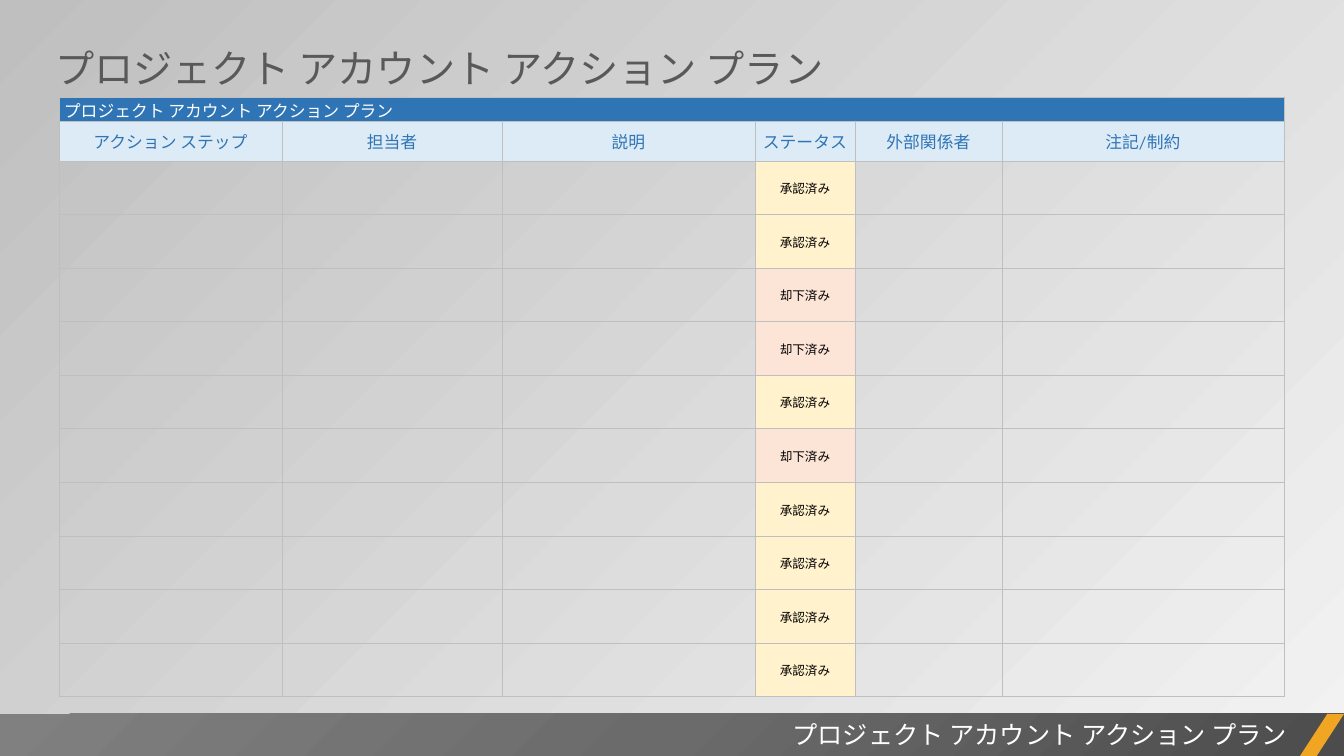
from dataclasses import dataclass

from lxml.etree import SubElement
from pptx import Presentation
from pptx.dml.color import RGBColor
from pptx.enum.shapes import MSO_SHAPE
from pptx.enum.text import MSO_ANCHOR, MSO_AUTO_SIZE, PP_ALIGN
from pptx.oxml.ns import qn
from pptx.util import Emu, Pt

SLIDE_WIDTH, SLIDE_HEIGHT = 1344, 756
EMU_PER_PX = 12192000 / SLIDE_WIDTH

PLAN_TITLE = "プロジェクト アカウント アクション プラン"
COLUMNS = {
    "アクション ステップ": 223,
    "担当者": 220,
    "説明": 253,
    "ステータス": 100,
    "外部関係者": 147,
    "注記/制約": 282,
}
STATUS_COLUMN = 3
APPROVED, REJECTED = "承認済み", "却下済み"
STATUSES = [APPROVED] * 2 + [REJECTED] * 2 + [APPROVED, REJECTED] + [APPROVED] * 4
BANNER_HEIGHT, HEADER_HEIGHT, BODY_HEIGHT = 24, 40, 536


@dataclass(frozen=True)
class Theme:
    """Colours, type sizes and font of the slide."""
    font: str = "League Spartan"
    title_size: int = 28
    footer_size: int = 18
    header_size: int = 12
    status_size: int = 9
    title: str = "595959"
    white: str = "FFFFFF"
    black: str = "000000"
    blue: str = "2F75B5"
    pale_blue: str = "DDEBF7"
    approved: str = "FFF2CC"
    rejected: str = "FCE4D6"
    border: str = "BFBFBF"
    accent: str = "F0A622"
    background: tuple = ((0, "F2F2F2", 40), (100, "BFBFBF", 100))
    footer: tuple = ((0, "4C4C4C", 100), (50, "6B6B6B", 100), (100, "808080", 100))


THEME = Theme()


def px(length):
    """Turn pixels into EMU."""
    return Emu(round(length * EMU_PER_PX))


def set_solid(fill, color):
    """Give a fill one colour."""
    fill.solid()
    fill.fore_color.rgb = RGBColor.from_string(color)


def set_gradient(properties, stops):
    """Replace the solid fill with a gradient and return its element."""
    solid = properties.find(qn("a:solidFill"))
    gradient = SubElement(properties, qn("a:gradFill"), rotWithShape="1")
    properties.replace(solid, gradient)
    stop_list = SubElement(gradient, qn("a:gsLst"))
    for position, color, opacity in stops:
        stop = SubElement(stop_list, qn("a:gs"), pos=str(position * 1000))
        color_element = SubElement(stop, qn("a:srgbClr"), val=color)
        if opacity < 100:
            SubElement(color_element, qn("a:alpha"), val=str(opacity * 1000))
    return gradient


def set_text(text_frame, text, size, color, align=PP_ALIGN.LEFT):
    """Write one formatted paragraph."""
    text_frame.text = text
    paragraph = text_frame.paragraphs[0]
    paragraph.alignment = align
    paragraph.font.name = THEME.font
    paragraph.font.size = Pt(size)
    paragraph.font.color.rgb = RGBColor.from_string(color)


def paint_background(slide):
    """Paint the diagonal grey background."""
    set_solid(slide.background.fill, THEME.white)
    properties = slide.element.find(".//" + qn("p:bgPr"))
    gradient = set_gradient(properties, THEME.background)
    SubElement(gradient, qn("a:lin"), ang=str(225 * 60000), scaled="0")


def add_block(slide, kind, left, top, width, height, color):
    """Add a flat shape without outline or shadow."""
    shape = slide.shapes.add_shape(kind, px(left), px(top), px(width), px(height))
    shape.shadow.inherit = False
    shape.line.fill.background()
    set_solid(shape.fill, color)
    return shape


def add_footer(slide):
    """Add the dark footer bar, its accent and its caption."""
    bar = add_block(slide, MSO_SHAPE.RECTANGLE, 0, 714, SLIDE_WIDTH, 42, THEME.black)
    gradient = set_gradient(bar.element.spPr, THEME.footer)
    circle = SubElement(gradient, qn("a:path"), path="circle")
    SubElement(circle, qn("a:fillToRect"), l="100000", t="100000")
    accent = add_block(slide, MSO_SHAPE.PARALLELOGRAM, 1300, 714, 44, 42, THEME.accent)
    accent.adjustments[0] = 0.65
    caption = slide.shapes.add_textbox(px(529), px(714), px(768), px(40))
    caption.text_frame.word_wrap = True
    caption.text_frame.auto_size = MSO_AUTO_SIZE.SHAPE_TO_FIT_TEXT
    set_text(caption.text_frame, PLAN_TITLE, THEME.footer_size, THEME.white, PP_ALIGN.RIGHT)


def place_title(slide):
    """Move and format the title placeholder."""
    title = slide.shapes.title
    title.left, title.top, title.width, title.height = px(45), px(39), px(791), px(57)
    frame = title.text_frame
    frame.word_wrap = True
    frame.auto_size = MSO_AUTO_SIZE.SHAPE_TO_FIT_TEXT
    frame.vertical_anchor = MSO_ANCHOR.TOP
    set_text(frame, PLAN_TITLE, THEME.title_size, THEME.title)


def set_borders(cell):
    """Draw thin grey lines around a cell."""
    properties = cell._tc.get_or_add_tcPr()
    for index, side in enumerate(("lnL", "lnR", "lnT", "lnB")):
        line = properties.makeelement(qn("a:" + side), {"w": str(Pt(0.5))})
        fill = SubElement(line, qn("a:solidFill"))
        SubElement(fill, qn("a:srgbClr"), val=THEME.border)
        properties.insert(index, line)


def format_cell(cell, text, size, color, fill, align=PP_ALIGN.CENTER, indent=1):
    """Fill a table cell with text and colour."""
    cell.vertical_anchor = MSO_ANCHOR.MIDDLE
    cell.margin_left, cell.margin_right = px(indent), px(1)
    cell.margin_top, cell.margin_bottom = px(1), 0
    set_text(cell.text_frame, text, size, color, align)
    set_solid(cell.fill, fill)


def add_plan_table(slide):
    """Add the action plan table."""
    width = sum(COLUMNS.values())
    height = BANNER_HEIGHT + HEADER_HEIGHT + BODY_HEIGHT
    frame = slide.shapes.add_table(
        len(STATUSES) + 2, len(COLUMNS), px(59), px(97), px(width), px(height))
    table = frame.table
    table.first_row = table.horz_banding = False
    for column, column_width in zip(table.columns, COLUMNS.values()):
        column.width = px(column_width)
    body_row = BODY_HEIGHT / len(STATUSES)
    for row, row_height in zip(
            table.rows, [BANNER_HEIGHT, HEADER_HEIGHT] + [body_row] * len(STATUSES)):
        row.height = px(row_height)
    for cell in table.iter_cells():
        cell.fill.background()
        set_borders(cell)

    for index, heading in enumerate(COLUMNS):
        format_cell(table.cell(0, index), "" if index else PLAN_TITLE, THEME.header_size,
                    THEME.white, THEME.blue, PP_ALIGN.LEFT, 5)
        format_cell(table.cell(1, index), heading, THEME.header_size,
                    THEME.blue, THEME.pale_blue)
    table.cell(0, 0).merge(table.cell(0, len(COLUMNS) - 1))
    status_fills = {APPROVED: THEME.approved, REJECTED: THEME.rejected}
    for row_index, status in enumerate(STATUSES, start=2):
        format_cell(table.cell(row_index, STATUS_COLUMN), status, THEME.status_size,
                    THEME.black, status_fills[status])


def main():
    """Build and save the slide."""
    presentation = Presentation()
    presentation.slide_width, presentation.slide_height = px(SLIDE_WIDTH), px(SLIDE_HEIGHT)
    slide = presentation.slides.add_slide(presentation.slide_layouts[5])
    paint_background(slide)
    add_footer(slide)
    place_title(slide)
    add_plan_table(slide)
    presentation.save("out.pptx")


if __name__ == "__main__":
    main()
